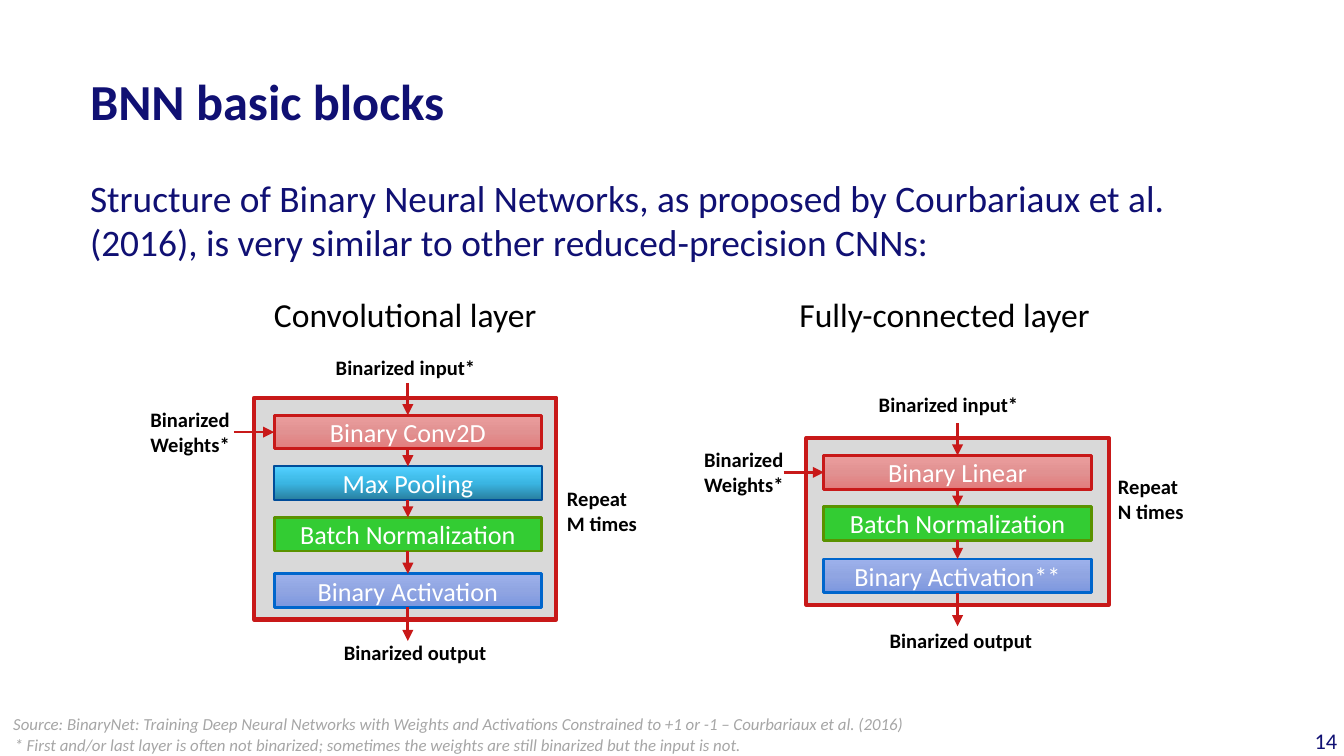
from copy import deepcopy

from pptx import Presentation
from pptx.dml.color import RGBColor
from pptx.enum.shapes import MSO_CONNECTOR, MSO_SHAPE
from pptx.enum.text import MSO_ANCHOR, PP_ALIGN
from pptx.oxml.ns import qn
from pptx.oxml.xmlchemy import OxmlElement
from pptx.util import Inches, Pt

COLORS = {
    "navy": "101073", "black": "000000", "white": "FFFFFF", "note": "A6A6A6",
    "panel": "D9D9D9", "red": "C81919",
}
# Block styles: fill colours from top to bottom, line colour, line width
BLOCK_STYLES = {
    "weights": (["EB9E9E", "E19191", "E27C7C"], "C81919", 1.5),
    "pooling": (["52D0FF", "3AB5E2", "297F9F"], "004C99", 1),
    "norm": (["33CC33"], "5A9200", 1.5),
    "activation": (["9DB1EB", "90A5E2", "7C97DF"], "0066CC", 1.5),
}
BLOCK_WIDTH, BLOCK_HEIGHT = 1.99, 0.25
PANEL_WIDTH = 2.25
TOP, LEFT, BOTTOM = 0, 1, 2


def rgb(value):
    return RGBColor.from_string(value)


def write_text(frame, text, size=11, color="black", bold=False, italic=False,
               align=PP_ALIGN.LEFT, anchor=MSO_ANCHOR.TOP, inset=None,
               wrap=True, line_spacing=None):
    frame.word_wrap = wrap
    frame.vertical_anchor = anchor
    if inset is not None:
        frame.margin_left = frame.margin_right = Inches(inset)
        frame.margin_top = frame.margin_bottom = Inches(inset)
    for index, line in enumerate(text.split("\n")):
        para = frame.add_paragraph() if index else frame.paragraphs[0]
        para.alignment = align
        if line_spacing:
            para.line_spacing = Pt(line_spacing)
        span = para.add_run()
        span.text = line
        span.font.name = "Calibri"
        span.font.size = Pt(size)
        span.font.bold = bold
        span.font.italic = italic
        span.font.color.rgb = rgb(COLORS[color])


class SlideBuilder:
    def __init__(self, page):
        self.page = page

    def title(self, text, left, top, width, height, **style):
        box = self.page.shapes.title
        box.left, box.top = Inches(left), Inches(top)
        box.width, box.height = Inches(width), Inches(height)
        write_text(box.text_frame, text, **style)

    def text(self, text, left, top, width, height, **style):
        box = self.page.shapes.add_textbox(
            Inches(left), Inches(top), Inches(width), Inches(height))
        write_text(box.text_frame, text, **style)

    def rectangle(self, left, top, width, height, fills, line, line_width):
        box = self.page.shapes.add_shape(
            MSO_SHAPE.RECTANGLE,
            Inches(left), Inches(top), Inches(width), Inches(height))
        box.shadow.inherit = False
        box.line.color.rgb = rgb(line)
        box.line.width = Pt(line_width)
        if len(fills) == 1:
            box.fill.solid()
            box.fill.fore_color.rgb = rgb(fills[0])
        else:
            box.fill.gradient()
            box.fill.gradient_angle = 270
            stop_list = box._element.spPr.find(".//" + qn("a:gsLst"))
            stop_list.append(deepcopy(stop_list[-1]))
            for index, stop in enumerate(box.fill.gradient_stops):
                stop.color.rgb = rgb(fills[index])
                stop.position = index / 2
        return box

    def block(self, text, left, top, style):
        box = self.rectangle(left, top, BLOCK_WIDTH, BLOCK_HEIGHT,
                             *BLOCK_STYLES[style])
        write_text(box.text_frame, text, size=14, color="white",
                   align=PP_ALIGN.CENTER, anchor=MSO_ANCHOR.MIDDLE)
        return box

    def arrow(self, start, end, source=None, target=None, side=TOP):
        line = self.page.shapes.add_connector(
            MSO_CONNECTOR.STRAIGHT,
            Inches(start[0]), Inches(start[1]), Inches(end[0]), Inches(end[1]))
        if source is not None:
            line.begin_connect(source, BOTTOM)
        if target is not None:
            line.end_connect(target, side)
        line.line.color.rgb = rgb(COLORS["red"])
        line.line.width = Pt(1.5)
        head = OxmlElement("a:tailEnd")
        head.set("type", "triangle")
        line.line._get_or_add_ln().append(head)
        line._element.spPr.append(OxmlElement("a:effectLst"))

    def layer(self, heading, heading_box, panel, block_left, blocks,
              input_at, weights_at, output_at, repeat, repeat_at):
        """Draw one layer diagram: panel, stacked blocks, arrows and labels."""
        left, top, height = panel
        self.rectangle(left, top, PANEL_WIDTH, height,
                       [COLORS["panel"]], COLORS["red"], 2.25)
        boxes = [self.block(name, block_left, y, style)
                 for name, y, style in blocks]

        # Arrows down through the stack
        center = block_left + BLOCK_WIDTH / 2
        first, last = blocks[0][1], blocks[-1][1] + BLOCK_HEIGHT
        self.arrow((center, first - 0.24), (center, first), target=boxes[0])
        for upper, lower in zip(boxes, boxes[1:]):
            self.arrow((center, first), (center, last), upper, lower)
        self.arrow((center, last), (center, last + 0.25), source=boxes[-1])
        middle = first + BLOCK_HEIGHT / 2
        self.arrow((block_left - 0.3, middle), (block_left, middle),
                   target=boxes[0], side=LEFT)

        # Labels
        self.text(heading, *heading_box, size=18, wrap=False)
        self.text("Binarized input*", *input_at, 2, 0.29, bold=True)
        self.text("Binarized\nWeights*", *weights_at, 2.1, 0.47, bold=True)
        self.text("Binarized output", *output_at, 2.08, 0.29, bold=True)
        self.text(repeat, *repeat_at, 0.73, 0.47, bold=True)


def main():
    deck = Presentation()
    # Widescreen page, 16:9
    deck.slide_width = Inches(10)
    deck.slide_height = Inches(10 * 9 / 16)
    slide = SlideBuilder(deck.slides.add_slide(deck.slide_layouts[5]))

    # Title and introduction
    slide.title("BNN basic blocks", 0.67, 0.6, 8.66, 0.43, size=27,
                color="navy", bold=True, inset=0, line_spacing=27)
    slide.text("Structure of Binary Neural Networks, as proposed by Courbariaux "
               "et al. (2016), is very similar to other reduced-precision CNNs:",
               0.67, 1.3, 8.66, 0.83, size=20, color="navy", inset=0)

    # Layer diagrams
    slide.layer(
        "Convolutional layer", (1.94, 2.14, 2.18, 0.4), (1.89, 2.96, 1.65), 2.04,
        [("Binary Conv2D", 3.09, "weights"),
         ("Max Pooling", 3.47, "pooling"),
         ("Batch Normalization", 3.85, "norm"),
         ("Binary Activation", 4.27, "activation")],
        input_at=(2.4, 2.59), weights_at=(1.02, 2.98), output_at=(2.46, 4.71),
        repeat="Repeat\nM times", repeat_at=(4.12, 3.57))
    slide.layer(
        "Fully-connected layer", (5.85, 2.14, 2.39, 0.4), (6, 3.26, 1.24), 6.13,
        [("Binary Linear", 3.39, "weights"),
         ("Batch Normalization", 3.77, "norm"),
         ("Binary Activation**", 4.16, "activation")],
        input_at=(6.44, 2.87), weights_at=(5.14, 3.28), output_at=(6.52, 4.62),
        repeat="Repeat\nN times", repeat_at=(8.22, 3.48))

    # Source, footnote and page number
    note = {"size": 9, "color": "note", "italic": True}
    slide.text("Source: BinaryNet: Training Deep Neural Networks with Weights and "
               "Activations Constrained to +1 or -1 – Courbariaux et al. (2016)",
               0, 5.26, 7.22, 0.25, **note)
    slide.text("* First and/or last layer is often not binarized; sometimes the "
               "weights are still binarized but the input is not.",
               0.01, 5.42, 7.22, 0.25, **note)
    slide.text("14", 9.5, 5.41, 0.45, 0.21, size=12, color="navy",
               align=PP_ALIGN.RIGHT, inset=0)

    deck.save("out.pptx")


if __name__ == "__main__":
    main()
